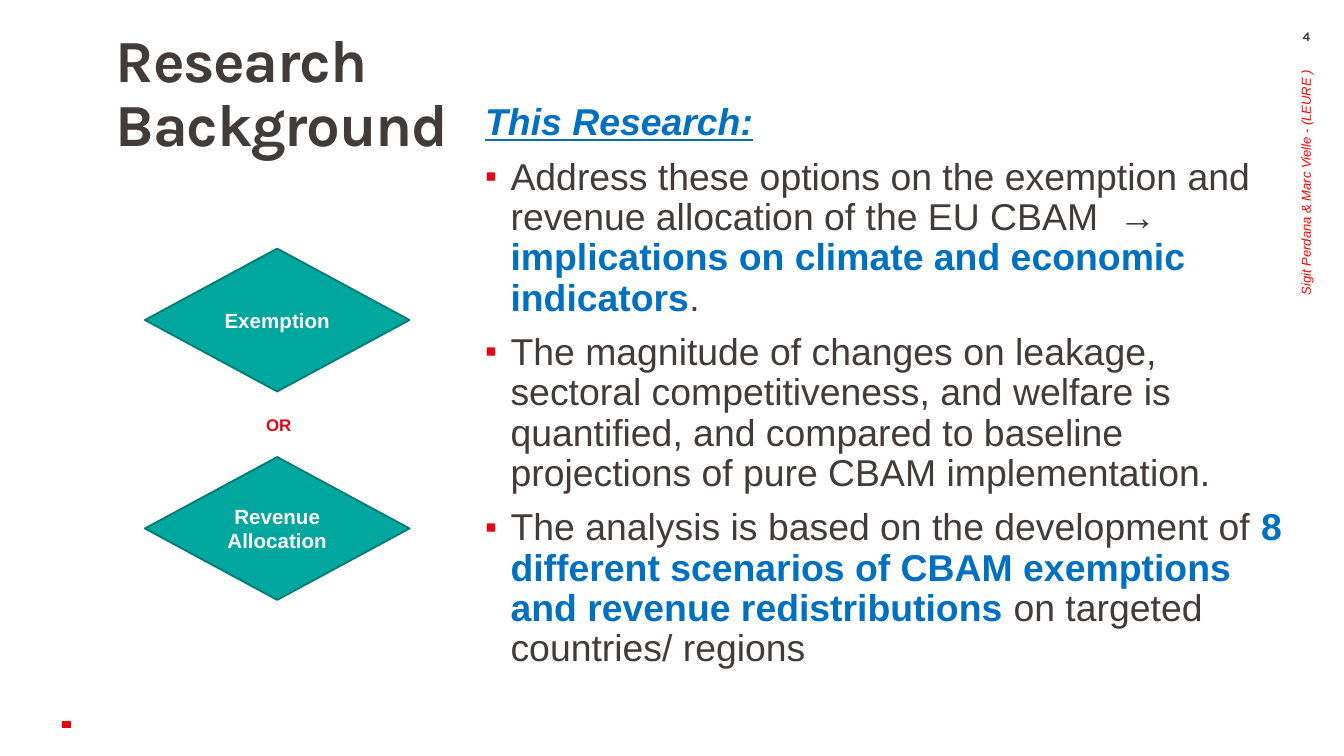
from dataclasses import dataclass

from lxml.etree import SubElement
from pptx import Presentation
from pptx.dml.color import RGBColor
from pptx.enum.shapes import MSO_SHAPE as Shape
from pptx.enum.text import MSO_ANCHOR as Anchor, MSO_AUTO_SIZE as AutoSize, PP_ALIGN as Align
from pptx.oxml.ns import qn
from pptx.util import Cm, Pt


@dataclass(frozen=True)
class Theme:
    heading_font: str = "Karla"
    body_font: str = "Arial"
    dark: str = "413C3A"
    red: str = "E30613"
    footer_red: str = "FF0000"
    blue: str = "0070C0"
    teal: str = "00A79F"
    teal_edge: str = "007C76"
    white: str = "FFFFFF"
    title_size: float = 32
    body_size: float = 20
    option_size: float = 11
    link_size: float = 9
    small_size: float = 7


THEME = Theme()
DEFAULT_INSETS = (0.25, 0.13, 0.25, 0.13)


def add_run(paragraph, text, size, color, font=THEME.body_font,
            bold=False, italic=False, underline=False, spacing=None):
    run = paragraph.add_run()
    run.text = text
    run.font.name = font
    run.font.size = Pt(size)
    run.font.color.rgb = RGBColor.from_string(color)
    run.font.bold = bold
    run.font.italic = italic
    run.font.underline = underline
    if spacing is not None:
        run.font._element.set("spc", str(round(spacing * 100)))


def add_bullet(paragraph, color, indent=Cm(0.48)):
    properties = paragraph._p.get_or_add_pPr()
    properties.set("marL", str(indent))
    properties.set("indent", str(-indent))
    bullet_color = SubElement(properties, qn("a:buClr"))
    SubElement(bullet_color, qn("a:srgbClr"), val=color)
    SubElement(properties, qn("a:buSzPct"), val="90000")
    SubElement(properties, qn("a:buFont"), typeface=THEME.body_font)
    SubElement(properties, qn("a:buChar"), char="▪")


def set_frame(frame, insets=DEFAULT_INSETS, anchor=Anchor.TOP, wrap=True):
    frame.auto_size = AutoSize.NONE
    frame.word_wrap = wrap
    frame.vertical_anchor = anchor
    (frame.margin_left, frame.margin_top,
     frame.margin_right, frame.margin_bottom) = map(Cm, insets)


class SlideBuilder:
    def __init__(self, presentation, theme):
        self.theme = theme
        self.slide = presentation.slides.add_slide(presentation.slide_layouts[5])

    def title(self, text, left, top, width, height):
        shape = self.slide.shapes.title
        shape.left, shape.top, shape.width, shape.height = map(Cm, (left, top, width, height))
        set_frame(shape.text_frame, insets=(0.51, 0, 0.2, 0.13))
        paragraph = shape.text_frame.paragraphs[0]
        paragraph.alignment = Align.LEFT
        paragraph.line_spacing = 0.9
        add_run(paragraph, text, self.theme.title_size, self.theme.dark,
                font=self.theme.heading_font, bold=True, spacing=-0.7)

    def box(self, left, top, width, height, **frame_format):
        shape = self.slide.shapes.add_textbox(*map(Cm, (left, top, width, height)))
        set_frame(shape.text_frame, **frame_format)
        return shape

    def label(self, text, left, top, width, height, size, color,
              align=Align.LEFT, rotation=0, frame_format=None, **run_format):
        shape = self.box(left, top, width, height, **(frame_format or {}))
        shape.rotation = rotation
        paragraph = shape.text_frame.paragraphs[0]
        paragraph.alignment = align
        add_run(paragraph, text, size, color, **run_format)

    def body(self, heading, points, left, top, width, height):
        """Each point is a list of (text, emphasised) pairs."""
        theme = self.theme
        frame = self.box(left, top, width, height, insets=(0.51, 0.13, 0.25, 0.13)).text_frame
        paragraph = frame.paragraphs[0]
        paragraph.line_spacing = 0.9
        add_run(paragraph, heading, theme.body_size, theme.blue,
                bold=True, italic=True, underline=True)
        for point in points:
            paragraph = frame.add_paragraph()
            add_bullet(paragraph, theme.red)
            paragraph.line_spacing = 0.9
            paragraph.space_before = Pt(7.5)
            for text, emphasised in point:
                add_run(paragraph, text, theme.body_size,
                        theme.blue if emphasised else theme.dark, bold=emphasised)

    def shape(self, kind, left, top, width, height, fill, line=None):
        shape = self.slide.shapes.add_shape(kind, *map(Cm, (left, top, width, height)))
        shape.shadow.inherit = False
        shape.fill.solid()
        shape.fill.fore_color.rgb = RGBColor.from_string(fill)
        if line:
            shape.line.color.rgb = RGBColor.from_string(line)
            shape.line.width = Pt(1)
        else:
            shape.line.fill.background()
        return shape

    def decision(self, text, left, top, width, height):
        theme = self.theme
        shape = self.shape(Shape.FLOWCHART_DECISION, left, top, width, height,
                           theme.teal, theme.teal_edge)
        set_frame(shape.text_frame, anchor=Anchor.MIDDLE)
        paragraph = shape.text_frame.paragraphs[0]
        paragraph.alignment = Align.CENTER
        add_run(paragraph, text, theme.option_size, theme.white, bold=True)


POINTS = [
    [("Address these options on the exemption and revenue allocation of the EU CBAM  → ", False),
     ("implications on climate and economic indicators", True),
     (".", False)],
    [("The magnitude of changes on leakage, sectoral competitiveness, and welfare is "
      "quantified, and compared to baseline projections of pure CBAM implementation.", False)],
    [("The analysis is based on the development of ", False),
     ("8 different scenarios of CBAM exemptions and revenue redistributions ", True),
     ("on targeted countries/ regions", False)],
]


def main():
    presentation = Presentation()
    presentation.slide_width, presentation.slide_height = Cm(25.4), Cm(14.29)
    builder = SlideBuilder(presentation, THEME)

    builder.shape(Shape.RECTANGLE, 1.17, 13.63, 0.17, 0.13, THEME.red)
    builder.label("Sigit Perdana & Marc Vielle - (LEURE ) ", 19.76, 5.21, 9.83, 1.42,
                  THEME.small_size, THEME.footer_red, align=Align.RIGHT, rotation=270,
                  frame_format={"anchor": Anchor.MIDDLE}, italic=True)
    builder.label("4", 23.98, 0.53, 1.42, 0.46, THEME.small_size, THEME.dark,
                  align=Align.CENTER, frame_format={"insets": (0.25, 0, 0.25, 0)},
                  font=THEME.heading_font, bold=True)
    builder.body("This Research:", POINTS, 8.66, 1.83, 15.95, 11.15)
    builder.title("Research Background", 1.68, 0.58, 10.19, 1.65)

    for row, option in enumerate(("Exemption", "Revenue Allocation")):
        builder.decision(option, 2.74, 4.7 + row * 3.94, 5, 2.7)
    builder.label("OR", 4.78, 7.7, 1.14, 0.64, THEME.link_size, THEME.red,
                  frame_format={"wrap": False}, bold=True)

    presentation.save("out.pptx")


if __name__ == "__main__":
    main()
